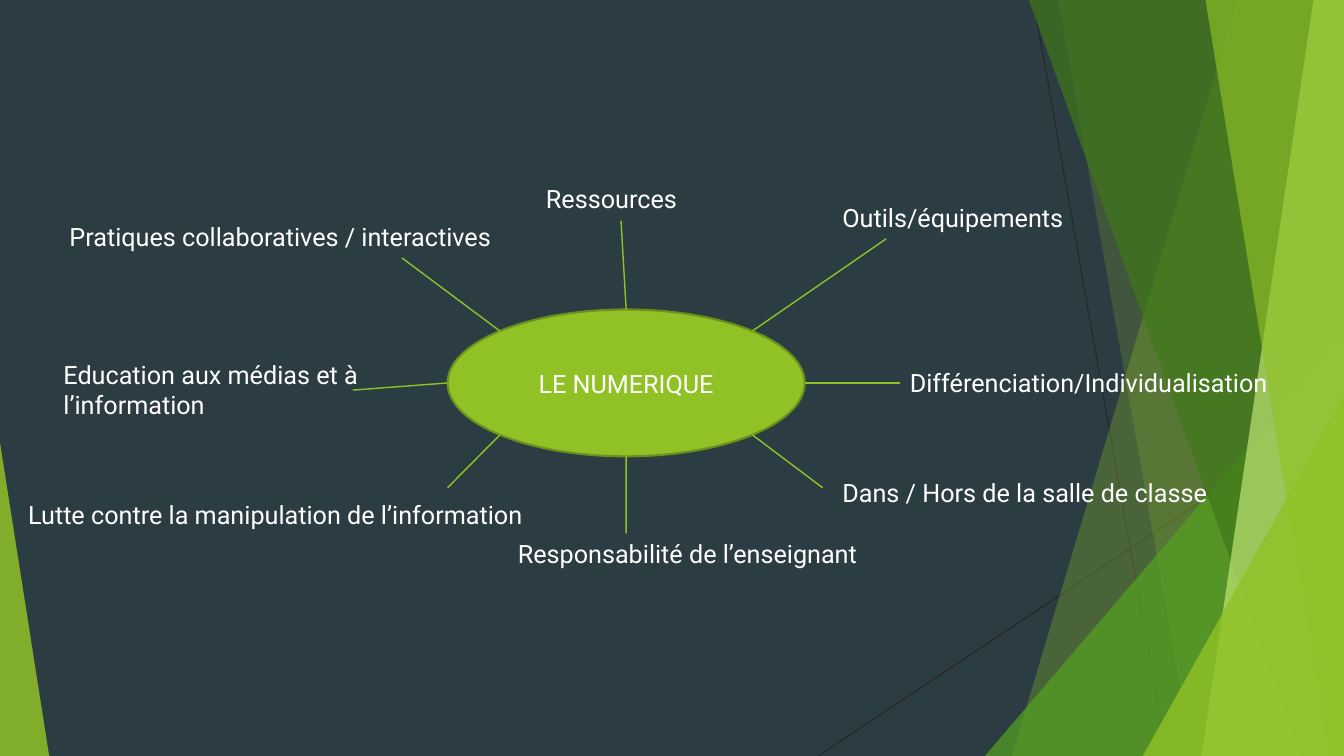
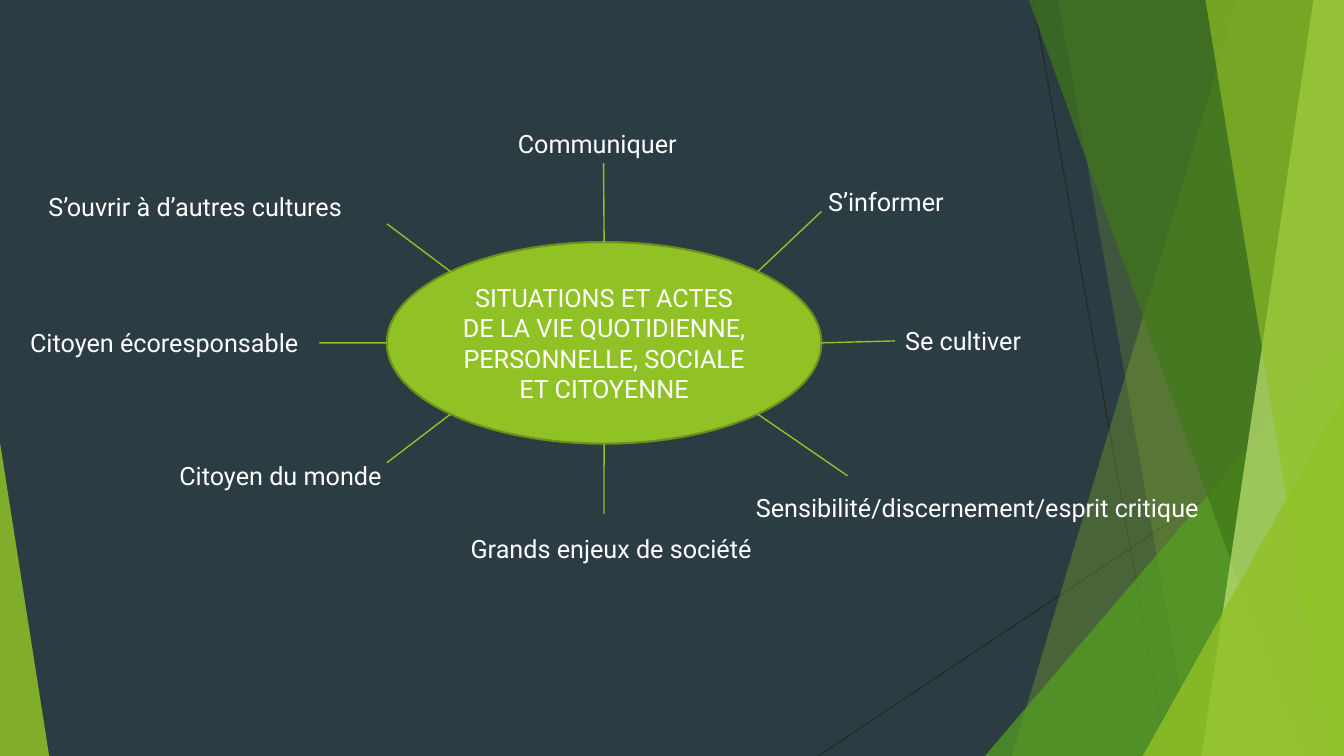
from math import cos, radians, sin

from lxml import etree
from pptx import Presentation
from pptx.dml.color import RGBColor
from pptx.enum.shapes import MSO_CONNECTOR, MSO_SHAPE
from pptx.enum.text import MSO_ANCHOR, MSO_AUTO_SIZE, PP_ALIGN
from pptx.oxml.ns import qn
from pptx.util import Cm, Pt

STRAIGHT = MSO_CONNECTOR.STRAIGHT
ELLIPSE, TRIANGLE = MSO_SHAPE.OVAL, MSO_SHAPE.ISOSCELES_TRIANGLE
LEFT, CENTER = PP_ALIGN.LEFT, PP_ALIGN.CENTER
TOP, MIDDLE = MSO_ANCHOR.TOP, MSO_ANCHOR.MIDDLE
FIT_SHAPE = MSO_AUTO_SIZE.SHAPE_TO_FIT_TEXT

WIDTH, HEIGHT = 33.87, 19.05
FONT = "Roboto"
COLORS = {
    "background": "2C3C43",
    "hairline": "262626",
    "lime": "90C226",
    "outline": "6B901C",
    "green": "54A021",
    "forest": "3F7819",
    "pale": "C0E474",
    "text": "FFFFFF",
}

# Hub: left, top, width, height. Topics run anticlockwise from the top:
# text, left, top, width of the label, then the outer end of its ray.
MAPS = [
    ("LE NUMERIQUE", (11.28, 7.8, 9, 3.7), [
        ("Ressources", 13.51, 4.5, 4.29, (15.65, 5.56)),
        ("Pratiques collaboratives / interactives", 1.5, 5.46, 12.52, (10.13, 6.5)),
        ("Education aux médias et à l’information", 1.35, 8.92, 8.51, (8.89, 9.83)),
        ("Lutte contre la manipulation de l’information", 0.46, 12.45, 13.56, (11.28, 12.29)),
        ("Responsabilité de l’enseignant", 12.8, 13.44, 9.53, (15.78, 13.44)),
        ("Dans / Hors de la salle de classe", 20.98, 11.91, 10.29, (20.73, 12.29)),
        ("Différenciation/Individualisation", 22.68, 9.14, 9.93, (22.68, 9.65)),
        ("Outils/équipements", 20.98, 4.98, 7.11, (22.33, 6.02)),
    ]),
    ("SITUATIONS ET ACTES DE LA VIE QUOTIDIENNE, PERSONNELLE, SOCIALE ET CITOYENNE",
     (9.75, 6.1, 10.95, 5.08), [
        ("Communiquer", 12.8, 3.1, 5.94, (15.21, 4.11)),
        ("S’ouvrir à d’autres cultures", 0.97, 4.7, 9.58, (9.75, 5.64)),
        ("Citoyen écoresponsable", 0.51, 8.13, 7.54, (8.05, 8.64)),
        ("Citoyen du monde", 4.27, 11.48, 9.58, (9.75, 11.66)),
        ("Grands enjeux de société", 11.61, 13.31, 8.26, (15.22, 12.95)),
        ("Sensibilité/discernement/esprit critique", 18.8, 12.29, 12.8, (21.36, 11.99)),
        ("Se cultiver", 22.56, 8.08, 5.26, (22.56, 8.59)),
        ("S’informer", 20.62, 4.57, 5.31, (20.7, 5.33)),
    ]),
]


def rgb(name):
    return RGBColor.from_string(COLORS[name])


def write(shape, text, align=LEFT, anchor=TOP, size=18, color="text"):
    frame = shape.text_frame
    frame.word_wrap = True
    frame.vertical_anchor = anchor
    para = frame.paragraphs[0]
    para.alignment = align
    span = para.add_run()
    span.text = text
    span.font.name = FONT
    span.font.size = Pt(size)
    span.font.color.rgb = rgb(color)


class MindMapDeck:
    def __init__(self):
        self.deck = Presentation()
        self.deck.slide_width, self.deck.slide_height = Cm(WIDTH), Cm(HEIGHT)
        fill = self.deck.slide_master.background.fill
        fill.solid()
        fill.fore_color.rgb = rgb("background")
        self.slide = None

    def new_slide(self):
        blank_layout = self.deck.slide_layouts[6]
        self.slide = self.deck.slides.add_slide(blank_layout)
        self.decorate()

    def paint(self, shape, color, opacity=100, outline=None):
        shape.shadow.inherit = False
        shape.fill.solid()
        shape.fill.fore_color.rgb = rgb(color)
        if opacity < 100:
            fill_color = shape.element.find(".//" + qn("a:srgbClr"))
            etree.SubElement(fill_color, qn("a:alpha"), val=str(opacity * 1000))
        if outline:
            shape.line.color.rgb = rgb(outline)
            shape.line.width = Pt(1.5)
        else:
            shape.line.fill.background()

    def line(self, start, end, color, width):
        points = [Cm(value) for value in (*start, *end)]
        connector = self.slide.shapes.add_connector(STRAIGHT, *points)
        connector.line.color.rgb = rgb(color)
        connector.line.width = Pt(width)
        properties = connector.element.find(qn("p:spPr"))
        etree.SubElement(properties, qn("a:effectLst"))
        return connector

    def band(self, top_x, bottom_x, color, opacity):
        """Fill from a slanted left edge to the right edge of the slide."""
        builder = self.slide.shapes.build_freeform(Cm(top_x), 0)
        corners = [(WIDTH, 0), (WIDTH, HEIGHT), (bottom_x, HEIGHT)]
        builder.add_line_segments([(Cm(x), Cm(y)) for x, y in corners])
        self.paint(builder.convert_to_shape(), color, opacity)

    def corner(self, left, top, width, apex, color, opacity):
        """Stand a right-angled triangle on the bottom edge."""
        shape = self.slide.shapes.add_shape(
            TRIANGLE, Cm(left), Cm(top), Cm(width), Cm(HEIGHT - top))
        shape.adjustments[0] = apex
        self.paint(shape, color, opacity)

    def decorate(self):
        self.line((26.04, 0), (29.41, HEIGHT), "hairline", 0.75)
        self.line((WIDTH, 10.24), (20.62, HEIGHT), "hairline", 0.75)
        self.band(31.19, 25.5, "lime", 30)
        self.band(26.67, 30.05, "lime", 20)
        self.corner(24.82, 8.46, 9.05, 1, "green", 72)
        self.band(25.93, 32.79, "forest", 70)
        self.band(33.1, 30.28, "pale", 70)
        self.band(30.38, 33.48, "lime", 65)
        self.corner(28.8, 9.98, 5.07, 1, "lime", 80)
        self.corner(0, 11.15, 1.24, 0, "lime", 85)

    def hub(self, text, bounds):
        shape = self.slide.shapes.add_shape(ELLIPSE, *map(Cm, bounds))
        self.paint(shape, "lime", outline="outline")
        write(shape, text, align=CENTER, anchor=MIDDLE)
        return shape

    def ray(self, hub, bounds, site, end):
        """Join one of the eight connection sites of the hub to a point."""
        left, top, width, height = bounds
        angle = radians(90 + 45 * site)
        start = (left + width / 2 * (1 + cos(angle)),
                 top + height / 2 * (1 - sin(angle)))
        connector = self.line(start, end, "lime", 1)
        joints = connector.element.find(".//" + qn("p:cNvCxnSpPr"))
        etree.SubElement(joints, qn("a:stCxn"), id=str(hub.shape_id), idx=str(site))

    def label(self, text, left, top, width):
        box = self.slide.shapes.add_textbox(Cm(left), Cm(top), Cm(width), Cm(1.03))
        write(box, text)
        box.text_frame.auto_size = FIT_SHAPE

    def mind_map(self, text, bounds, topics):
        self.new_slide()
        hub = self.hub(text, bounds)
        for site, (*_, end) in enumerate(topics):
            self.ray(hub, bounds, site, end)
        for topic, left, top, width, _ in topics:
            self.label(topic, left, top, width)


def main():
    maps = MindMapDeck()
    for text, bounds, topics in MAPS:
        maps.mind_map(text, bounds, topics)
    maps.deck.save("out.pptx")


if __name__ == "__main__":
    main()
